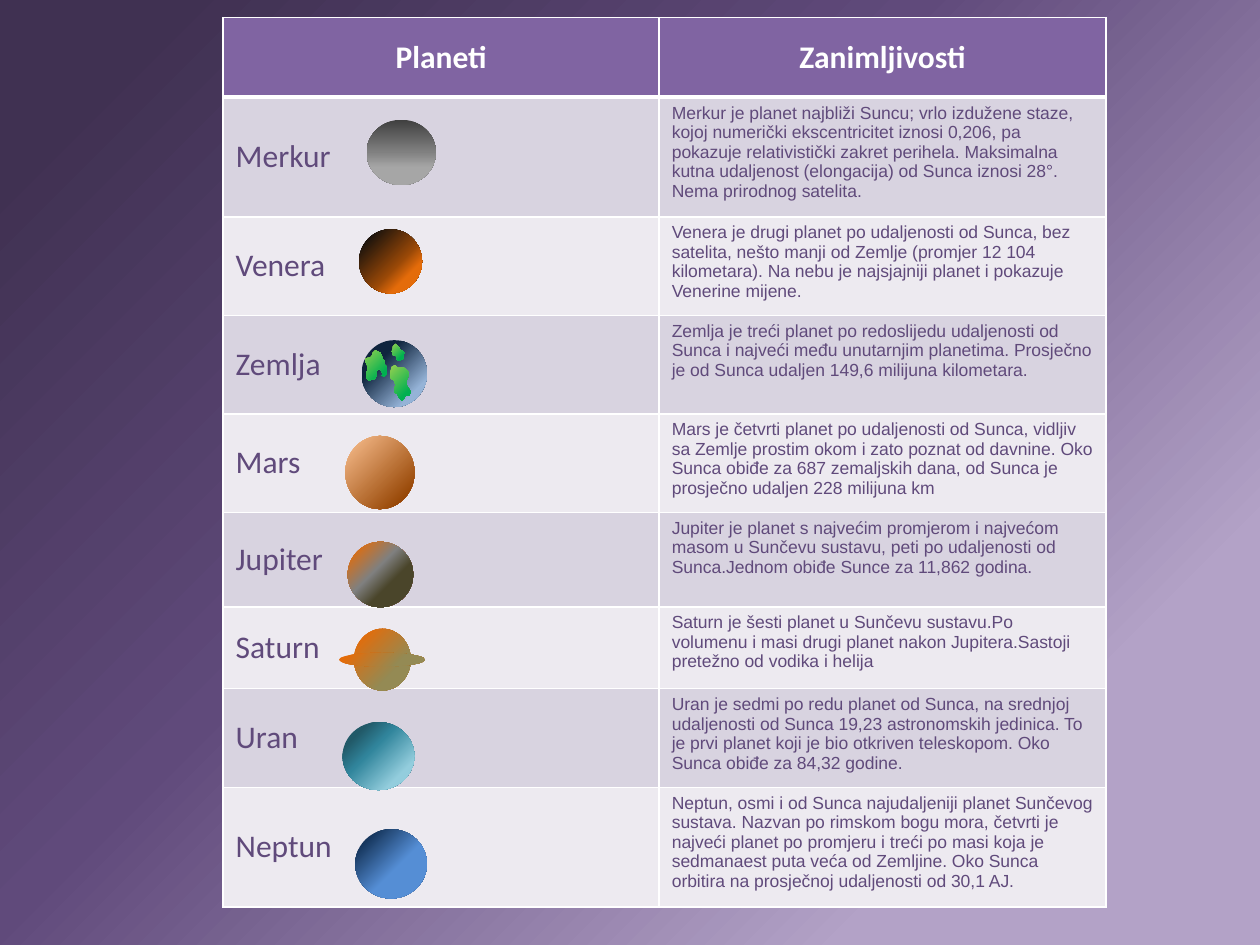
from itertools import accumulate

from lxml import etree
from pptx import Presentation
from pptx.dml.color import RGBColor
from pptx.enum.shapes import MSO_SHAPE as Shape
from pptx.enum.text import MSO_ANCHOR as Anchor, PP_ALIGN as Align
from pptx.oxml import parse_xml
from pptx.oxml.ns import nsdecls, qn
from pptx.util import Pt

LEFT, TOP = 127.5, 10
COLUMNS = [249.2, 255.2]
ROWS = [45.4, 68.5, 56.3, 56.3, 56.3, 54, 46.8, 56.3, 68.5]
PURPLE, HEADER, WHITE = "604A7B", "8064A2", "FFFFFF"
BANDS = ["D8D3E0", "EDEAF0"]

FACTS = [
    ("Merkur", "Merkur je planet najbliži Suncu; vrlo izdužene staze, kojoj numerički "
     "ekscentricitet iznosi 0,206, pa pokazuje relativistički zakret perihela. Maksimalna "
     "kutna udaljenost (elongacija) od Sunca iznosi 28°. Nema prirodnog satelita. "),
    ("Venera", "Venera je drugi planet po udaljenosti od Sunca, bez satelita, nešto manji "
     "od Zemlje (promjer 12 104 kilometara). Na nebu je najsjajniji planet i pokazuje "
     "Venerine mijene. "),
    ("Zemlja", "Zemlja je treći planet po redoslijedu udaljenosti od Sunca i najveći među "
     "unutarnjim planetima. Prosječno je od Sunca udaljen 149,6 milijuna kilometara."),
    ("Mars", "Mars je četvrti planet po udaljenosti od Sunca, vidljiv sa Zemlje prostim okom "
     "i zato poznat od davnine. Oko Sunca obiđe za 687 zemaljskih dana, od Sunca je "
     "prosječno udaljen 228 milijuna km"),
    ("Jupiter", "Jupiter je planet s najvećim promjerom i najvećom masom u Sunčevu sustavu, "
     "peti po udaljenosti od Sunca.Jednom obiđe Sunce za 11,862 godina."),
    ("Saturn", "Saturn je šesti planet u Sunčevu sustavu.Po volumenu i masi drugi planet "
     "nakon Jupitera.Sastoji pretežno od vodika i helija "),
    ("Uran", "Uran je sedmi po redu planet od Sunca, na srednjoj udaljenosti od Sunca "
     "19,23 astronomskih jedinica. To je prvi planet koji je bio otkriven teleskopom. "
     "Oko Sunca obiđe za 84,32 godine."),
    ("Neptun", "Neptun, osmi i od Sunca najudaljeniji planet Sunčevog sustava. Nazvan po "
     "rimskom bogu mora, četvrti je najveći planet po promjeru i treći po masi koja je "
     "sedmanaest puta veća od Zemljine. Oko Sunca orbitira na prosječnoj udaljenosti od "
     "30,1 AJ."),
]

# Offset from the row's corner, size, gradient stops
SATURN_STOPS = [(30, "948A54"), (89, "E46C0A")]
PLANETS = {
    "Merkur": (82, 13, 39.6, 37.4, [(0, "404040"), (49, "808080"), (73, "A6A6A6")]),
    "Venera": (77.7, 7.1, 36, 36.7, [(9, "0D0D0D"), (58, "984807"), (75, "E46C0A")]),
    "Zemlja": (79.1, 14.2, 37.4, 38.2, [(21, "95B3D7"), (71, "0F243E")]),
    "Mars": (69.8, 12.6, 39.6, 41.8, [(1, "FAC090"), (85, "984807")]),
    "Jupiter": (71.2, 16.8, 37.4, 37.4, [(9, "E46C0A"), (43, "808080"), (65, "4A452A")]),
    "Saturn": (74.8, 12.5, 32.4, 35.3, SATURN_STOPS),
    "Uran": (68.3, 19, 41, 38.9, [(19, "215968"), (41, "31859C"), (79, "93CDDD")]),
    "Neptun": (75.5, 23.9, 41, 39.6, [(16, "17375E"), (57, "558ED5"), (95, "558ED5")]),
}
ANGLES = {"Merkur": 90, "Zemlja": None, "Saturn": None}

# Outlines in hundredths of an inch from the globe's corner
CONTINENTS = [
    [(32, 22), (34, 22), (37, 25), (37, 29), (36, 32), (36, 36), (38, 39), (39, 41), (38, 44),
     (35, 44), (34, 46), (33, 47), (32, 48), (30, 46), (29, 44), (28, 42), (27, 42), (26, 41),
     (26, 38), (27, 36), (26, 32), (24, 31), (23, 30), (23, 25), (24, 21), (26, 20), (27, 20),
     (29, 22)],
    [(17, 15), (15, 10), (11, 8), (9, 10), (8, 13), (6, 14), (5, 14), (3, 15), (3, 17), (4, 19),
     (5, 21), (5, 24), (4, 25), (4, 30), (5, 31), (6, 32), (7, 32), (8, 31), (10, 31), (11, 30),
     (12, 28), (12, 25), (13, 23), (15, 23), (17, 27), (16, 28), (18, 29), (20, 27), (20, 21),
     (19, 20), (18, 19), (18, 16)],
    [(25, 5), (25, 7), (24, 9), (25, 11), (25, 12), (27, 12), (28, 14), (28, 15), (29, 16),
     (31, 16), (32, 15), (33, 15), (33, 12), (34, 10), (33, 9), (32, 8), (31, 8), (30, 7),
     (30, 6), (29, 5), (28, 4), (27, 3)],
]


def color(value):
    return RGBColor.from_string(value)


def paint_gradient(fill, parent, stops, angle):
    """Fill with a linear gradient, or radially from the lower right if angle is None."""
    fill.solid()
    marks = "".join(f'<a:gs pos="{position * 1000}"><a:srgbClr val="{value}"/></a:gs>'
                    for position, value in stops)
    if angle is None:
        direction = '<a:path path="circle"><a:fillToRect l="100000" t="100000"/></a:path>'
    else:
        direction = f'<a:lin ang="{angle * 60000}" scaled="0"/>'
    solid = parent.find(qn("a:solidFill"))
    parent.replace(solid, parse_xml(
        f'<a:gradFill {nsdecls("a")} rotWithShape="1"><a:gsLst>{marks}</a:gsLst>'
        f'{direction}</a:gradFill>'))


def finish_shape(shape, stops, angle):
    shape.shadow.inherit = False
    shape.line.fill.background()
    paint_gradient(shape.fill, shape.element.spPr, stops, angle)


def add_ellipse(slide, left, top, width, height, stops, angle):
    shape = slide.shapes.add_shape(Shape.OVAL, Pt(left), Pt(top), Pt(width), Pt(height))
    finish_shape(shape, stops, angle)


def add_continents(slide, left, top):
    for first, *others in CONTINENTS:
        builder = slide.shapes.build_freeform(*first, scale=Pt(0.72))
        builder.add_line_segments(others, close=True)
        shape = builder.convert_to_shape(Pt(left), Pt(top))
        finish_shape(shape, [(1, "92D050"), (79, "00B050")], 45)


def add_planet(slide, name, row_left, row_top):
    offset_x, offset_y, width, height, stops = PLANETS[name]
    left, top = row_left + offset_x, row_top + offset_y
    add_ellipse(slide, left, top, width, height, stops, ANGLES.get(name, 45))
    if name == "Zemlja":
        add_continents(slide, left, top)
    elif name == "Saturn":
        add_ellipse(slide, left - 8.6, top + 13.7, 49, 7.9, stops, None)


def set_borders(cell, bottom):
    properties = cell._tc.get_or_add_tcPr()
    widths = {"lnL": 1, "lnR": 1, "lnT": 1, "lnB": bottom}
    for index, (side, width) in enumerate(widths.items()):
        line = etree.Element(qn(f"a:{side}"), w=str(Pt(width)))
        fill = etree.SubElement(line, qn("a:solidFill"))
        etree.SubElement(fill, qn("a:srgbClr"), val=WHITE)
        properties.insert(index, line)


def fill_cell(cell, text, background, text_color, size=18, font_name="Calibri",
              header=False, anchor=Anchor.MIDDLE):
    cell.fill.solid()
    cell.fill.fore_color.rgb = color(background)
    cell.vertical_anchor = anchor
    set_borders(cell, 3 if header else 1)
    cell.text = text
    paragraph = cell.text_frame.paragraphs[0]
    paragraph.alignment = Align.CENTER if header else Align.LEFT
    font = paragraph.font
    font.name, font.size, font.bold = font_name, Pt(size), header
    font.color.rgb = color(text_color)


def add_facts_table(slide, left, top):
    table = slide.shapes.add_table(len(ROWS), len(COLUMNS), Pt(left), Pt(top),
                                   Pt(sum(COLUMNS)), Pt(sum(ROWS))).table
    for column, width in zip(table.columns, COLUMNS):
        column.width = Pt(width)
    for row, height in zip(table.rows, ROWS):
        row.height = Pt(height)
    for index, title in enumerate(["Planeti", "Zanimljivosti"]):
        fill_cell(table.cell(0, index), title, HEADER, WHITE, header=True)
    for index, (name, fact) in enumerate(FACTS):
        band = BANDS[index % 2]
        fill_cell(table.cell(index + 1, 0), name, band, PURPLE)
        fill_cell(table.cell(index + 1, 1), fact, band, PURPLE, 10, "Arial", anchor=Anchor.TOP)


def main():
    presentation = Presentation()
    presentation.slide_width, presentation.slide_height = Pt(720), Pt(540)
    slide = presentation.slides.add_slide(presentation.slide_layouts[6])
    background = slide.background.fill
    background.solid()
    paint_gradient(background, slide.element.find(".//" + qn("p:bgPr")),
                   [(8, "403152"), (42, "604A7B"), (81, "B3A2C7")], 45)
    add_facts_table(slide, LEFT, TOP)
    row_tops = accumulate(ROWS[:-1], initial=TOP)
    next(row_tops)
    for (name, _), row_top in zip(FACTS, row_tops):
        add_planet(slide, name, LEFT, row_top)
    presentation.save("out.pptx")


if __name__ == "__main__":
    main()
